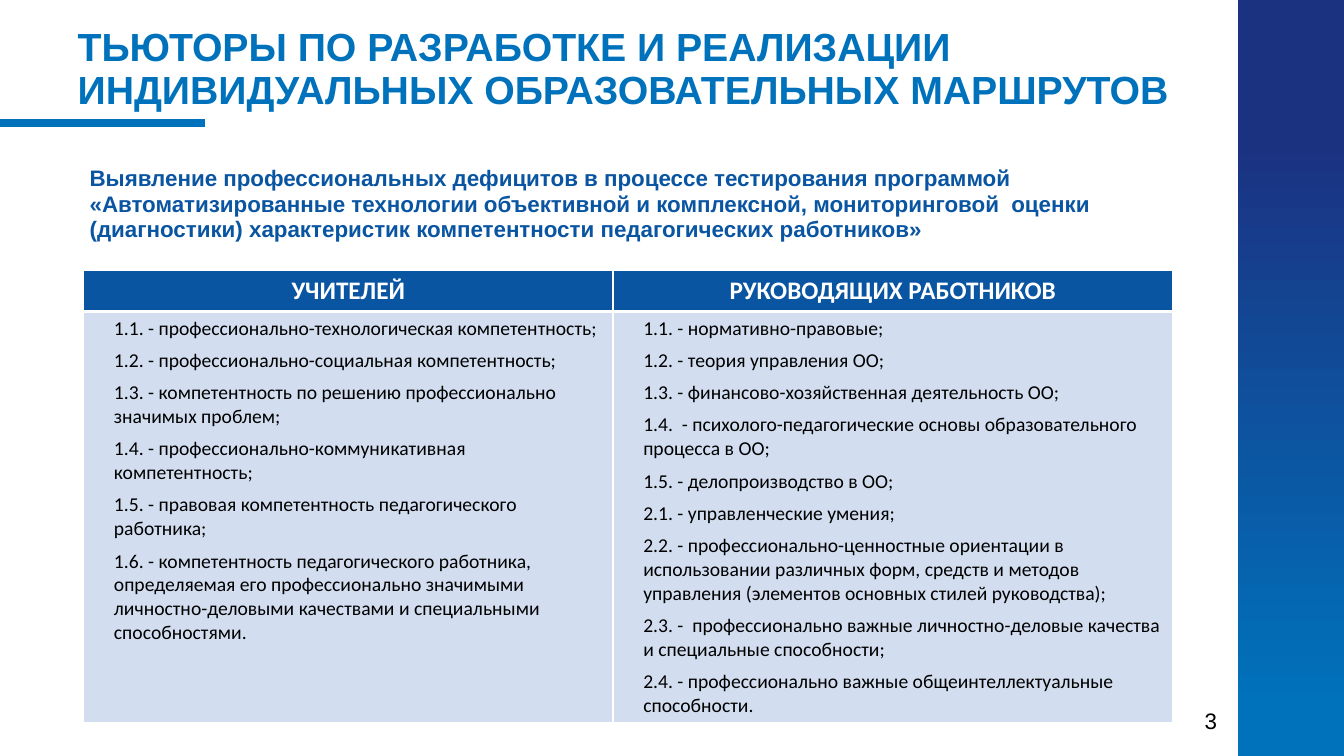
from lxml.etree import SubElement as Sub
from pptx import Presentation
from pptx.dml.color import RGBColor as RGB
from pptx.enum.shapes import MSO_CONNECTOR as Link, MSO_SHAPE as Form
from pptx.enum.text import MSO_ANCHOR as Anchor, MSO_AUTO_SIZE as Fit, PP_ALIGN as Align
from pptx.oxml.ns import qn
from pptx.util import Inches, Pt

BLUE = RGB(0x00, 0x72, 0xBC)
NAVY = RGB(0x1B, 0x32, 0x81)
ROYAL = RGB(0x0A, 0x55, 0xA2)
PALE = RGB(0xD2, 0xDE, 0xEF)
WHITE = RGB(0xFF, 0xFF, 0xFF)
BLACK = RGB(0x00, 0x00, 0x00)

WIDE, HIGH = 133.3, 75
STEP = 0.1

TITLE = "ТЬЮТОРЫ ПО РАЗРАБОТКЕ И РЕАЛИЗАЦИИ ИНДИВИДУАЛЬНЫХ ОБРАЗОВАТЕЛЬНЫХ МАРШРУТОВ"
LEAD = (
    "Выявление профессиональных дефицитов в процессе тестирования программой\n"
    "«Автоматизированные технологии объективной и комплексной, мониторинговой  оценки "
    "(диагностики) характеристик компетентности педагогических работников»"
)
SKILLS = {
    "УЧИТЕЛЕЙ": [
        "1.1. - профессионально-технологическая компетентность;",
        "1.2. - профессионально-социальная компетентность;",
        "1.3. - компетентность по решению профессионально значимых проблем;",
        "1.4. - профессионально-коммуникативная компетентность;",
        "1.5. - правовая компетентность педагогического работника;",
        "1.6. - компетентность педагогического работника, определяемая его профессионально "
        "значимыми личностно-деловыми качествами и специальными способностями.",
    ],
    "РУКОВОДЯЩИХ РАБОТНИКОВ": [
        "1.1. - нормативно-правовые;",
        "1.2. - теория управления ОО;",
        "1.3. - финансово-хозяйственная деятельность ОО;",
        "1.4.  - психолого-педагогические основы образовательного процесса в ОО;",
        "1.5. - делопроизводство в ОО;",
        "2.1. - управленческие умения;",
        "2.2. - профессионально-ценностные ориентации в использовании различных форм, средств "
        "и методов управления (элементов основных стилей руководства);",
        "2.3. -  профессионально важные личностно-деловые качества и специальные способности;",
        "2.4. - профессионально важные общеинтеллектуальные способности.",
    ],
}


def grid(*cells):
    """Turn counts of grid columns or rows into lengths."""
    return [Inches(STEP * cell) for cell in cells]


class Page:
    """Holds the fonts and the slide; places are in grid columns and rows."""

    head_font, cell_font = "Arial", "Calibri"

    def __init__(self, deck):
        self.slide = deck.slides.add_slide(deck.slide_layouts[5])
        self.shapes = self.slide.shapes

    def style(self, par, size, color, font, bold=False, align=Align.LEFT, lead=None):
        par.alignment = align
        if lead:
            par.line_spacing = Pt(lead)
        for run in par.runs:
            face = run.font
            face.name, face.size, face.bold = font, Pt(size), bold
            face.color.rgb = color

    def fill_box(self, box, text, size, color, anchor=Anchor.MIDDLE, **look):
        frame = box.text_frame
        frame.word_wrap, frame.auto_size = True, Fit.NONE
        frame.vertical_anchor = anchor
        par = frame.paragraphs[0]
        par.text = text
        self.style(par, size, color, self.head_font, **look)

    def title(self, place, text, **look):
        box = self.shapes.title
        box.left, box.top, box.width, box.height = grid(*place)
        self.fill_box(box, text, 28, BLUE, bold=True, **look)

    def text(self, place, text, size, color, **look):
        self.fill_box(self.shapes.add_textbox(*grid(*place)), text, size, color, **look)

    def band(self, place):
        bar = self.shapes.add_shape(Form.RECTANGLE, *grid(*place))
        bar.shadow.inherit = False
        bar.line.fill.background()
        bar.fill.gradient()
        bar.fill.gradient_angle = 270
        for stop, (spot, color) in zip(bar.fill.gradient_stops, [(0.18, NAVY), (0.94, BLUE)]):
            stop.position, stop.color.rgb = spot, color

    def rule(self, ends, width):
        line = self.shapes.add_connector(Link.STRAIGHT, *grid(*ends))
        line.line.color.rgb, line.line.width = BLUE, Pt(width)
        Sub(line._element.spPr, qn("a:effectLst"))

    def edge(self, cell, **widths):
        """Draw white cell borders, with a width in points for each side."""
        props = cell._tc.get_or_add_tcPr()
        for side, width in widths.items():
            line = Sub(props, qn(f"a:ln{side}"), w=str(Pt(width)))
            Sub(Sub(line, qn("a:solidFill")), qn("a:srgbClr"), val=str(WHITE))

    def table(self, place, cols, rows, data):
        table = self.shapes.add_table(len(rows), len(cols), *grid(*place)).table
        table.horz_banding = False
        for row, high in zip(table.rows, grid(*rows)):
            row.height = high
        for i, (wide, (head, items)) in enumerate(zip(grid(*cols), data.items())):
            table.columns[i].width = wide
            top, body = table.cell(0, i), table.cell(1, i)
            self.edge(top, L=1, R=1, T=1, B=3)
            self.edge(body, L=1, R=1, T=3, B=1)
            for cell, color in ((top, ROYAL), (body, PALE)):
                cell.fill.solid()
                cell.fill.fore_color.rgb = color
            top.text_frame.text = head
            self.style(top.text_frame.paragraphs[0], 18, WHITE, self.cell_font, True, Align.CENTER)
            body.text_frame.text = "\n".join(items)
            for par in body.text_frame.paragraphs:
                props = par._p.get_or_add_pPr()
                props.set("marL", str(Inches(0.2)))
                props.set("indent", "0")
                par.space_after = Pt(6)
                self.style(par, 14, BLACK, self.cell_font)


def main():
    deck = Presentation()
    deck.slide_width, deck.slide_height = grid(WIDE, HIGH)
    page = Page(deck)
    page.text((116.1, 69.4, 8, 4.1), "3", 16, BLACK, align=Align.CENTER)
    page.band((122.8, 0, WIDE - 122.8, HIGH))
    page.rule((0, 12.2, 20.3, 12.2), 6)
    page.title((6.7, 1.6, 111.2, 10.5), TITLE, lead=31)
    page.text((7.9, 16, 115.1, 8.6), LEAD, 16, ROYAL, anchor=Anchor.TOP, bold=True, lead=18)
    page.table((8.3, 26.8, 108, 44.4), (52.5, 55.5), (4.1, 40.3), SKILLS)
    deck.save("out.pptx")


if __name__ == "__main__":
    main()
